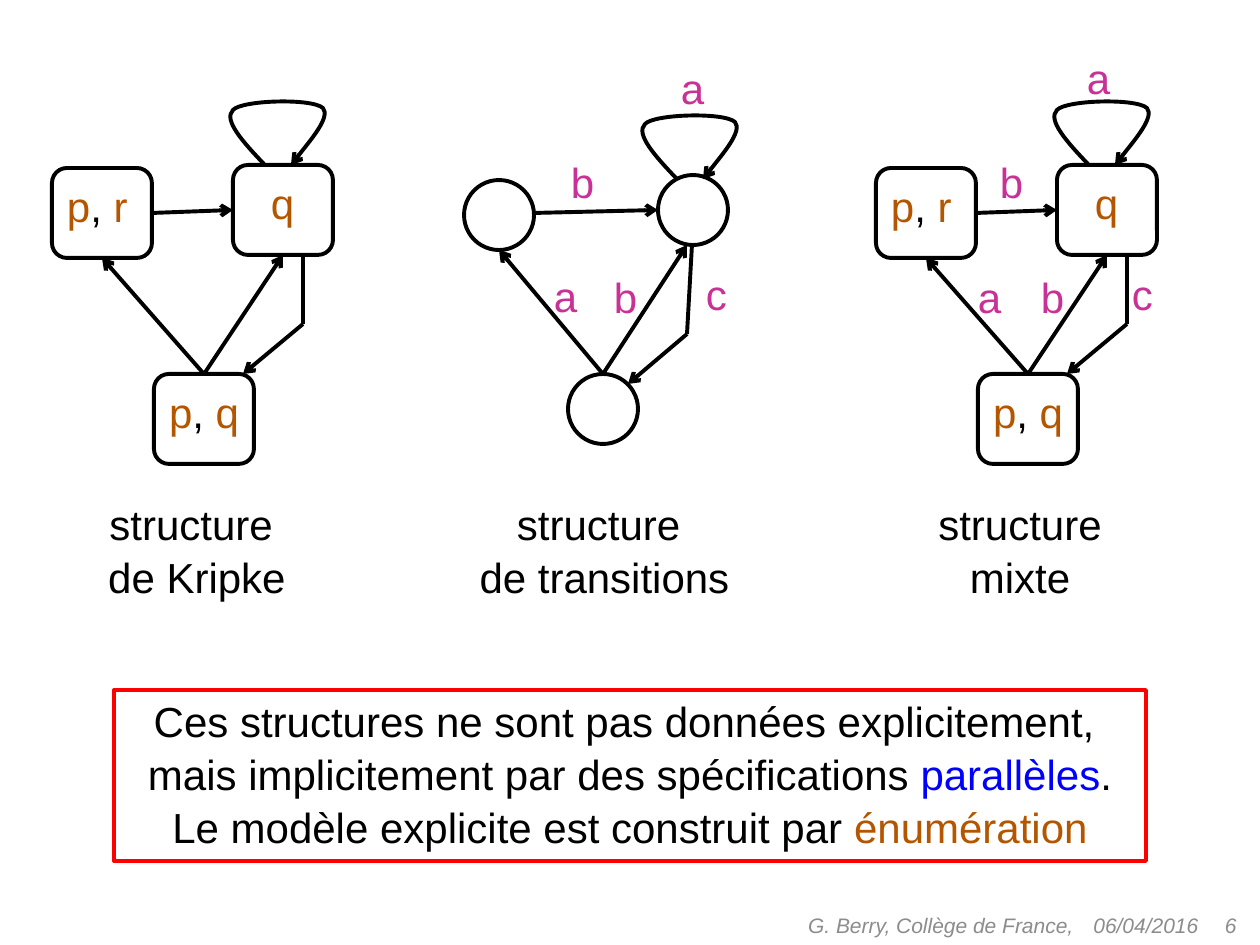
from dataclasses import dataclass

from lxml.etree import SubElement
from pptx import Presentation
from pptx.dml.color import RGBColor
from pptx.enum.shapes import MSO_CONNECTOR, MSO_SHAPE
from pptx.enum.text import MSO_ANCHOR, MSO_AUTO_SIZE, PP_ALIGN
from pptx.oxml.ns import qn
from pptx.util import Pt

SCALE = 914400 / 126  # EMU per px
TOP, BOTTOM, LEFT, RIGHT = 0, 2, 1, 3


@dataclass(frozen=True)
class Theme:
    font: str = "Arial"
    body: int = 24
    small: int = 12
    line: float = 2.25
    spacing: float = 1.05
    black: str = "000000"
    state: str = "B45600"
    action: str = "C83296"
    accent: str = "0000FF"
    frame: str = "FF0000"
    footer: str = "8C8C8C"


T = Theme()


def px(n):
    return round(n * SCALE)


def box_px(x, y, w, h):
    return px(x), px(y), px(w), px(h)


def outline(sp, color=T.black):
    """Unfilled shape with a plain outline and no shadow."""
    sp.fill.background()
    sp.line.color.rgb = RGBColor.from_string(color)
    sp.line.width = Pt(T.line)
    sp.shadow.inherit = False


def add_runs(p, runs, size=T.body, italic=False):
    for text, color in runs:
        r = p.add_run()
        r.text = text
        r.font.name, r.font.size, r.font.italic = T.font, Pt(size), italic
        r.font.color.rgb = RGBColor.from_string(color)


def write(sp, paragraphs, align, wrap):
    """Body text: a list of paragraphs, each a list of (text, colour)."""
    tf = sp.text_frame
    tf.word_wrap = wrap
    tf.auto_size = MSO_AUTO_SIZE.SHAPE_TO_FIT_TEXT
    tf.vertical_anchor = MSO_ANCHOR.TOP
    tf.margin_left = tf.margin_right = px(13)
    tf.margin_top, tf.margin_bottom = px(3), px(9)
    for i, runs in enumerate(paragraphs):
        p = tf.add_paragraph() if i else tf.paragraphs[0]
        p.alignment, p.line_spacing = align, T.spacing
        add_runs(p, runs)


def label(shapes, box, paragraphs, align=PP_ALIGN.LEFT):
    write(shapes.add_textbox(*box_px(*box)), paragraphs, align, False)


def arrowhead(sp):
    SubElement(sp.line._get_or_add_ln(), qn("a:tailEnd"), type="arrow")


def edge(shapes, start, end, arrow=True):
    cx = shapes.add_connector(MSO_CONNECTOR.STRAIGHT,
                              *map(px, (*start, *end)))
    cx.line.color.rgb = RGBColor.from_string(T.black)
    cx.line.width = Pt(T.line)
    if arrow:
        arrowhead(cx)
    SubElement(cx._element.spPr, qn("a:effectLst"))
    return cx


def self_loop(shapes, x, y):
    """Curved arrow from a state back to itself."""
    points = [(213, 65), (191, 42), (171, 20), (181, 10), (190, 0), (260, -2),
              (271, 8), (279, 17), (239, 65), (239, 65)]
    (x0, y0), *rest = [(px(x + dx), px(y + dy)) for dx, dy in points]
    fb = shapes.build_freeform(x0, y0)
    fb.add_line_segments(rest, close=False)
    sp = fb.convert_to_shape()
    outline(sp)
    arrowhead(sp)
    # Every three straight segments become one Bézier curve
    segments = list(sp._element.iter(qn("a:lnTo")))
    for i in range(0, len(segments), 3):
        curve = SubElement(segments[i].getparent(), qn("a:cubicBezTo"))
        for segment in segments[i:i + 3]:
            curve.append(segment[0])
            segment.getparent().remove(segment)


def caption(shapes, box, lines):
    label(shapes, box, [[(line, T.black)] for line in lines], PP_ALIGN.CENTER)


def action_labels(shapes, x, y, labels):
    for text, dx, dy in labels:
        label(shapes, (x + dx, y + dy, 49, 64), [[(text, T.action)]])


def boxed_graph(s, x, y):
    """States as rounded boxes with their propositions."""
    shapes = s.shapes.add_group_shape().shapes
    states = []
    for names, dx, dy, text_dx, text_w in (("pq", 102, 274, 2, 96),
                                           ("pr", 0, 68, 2, 87),
                                           ("q", 181, 65, 25, 49)):
        sp = shapes.add_shape(MSO_SHAPE.ROUNDED_RECTANGLE,
                              *box_px(x + dx, y + dy, 100, 90))
        outline(sp)
        states.append(sp)
        runs = [(names[0], T.state)]
        for name in names[1:]:
            runs += [(", ", T.black), (name, T.state)]
        label(shapes, (x + dx + text_dx, y + dy + 7, text_w, 64), [runs])
    pq, pr, q = states
    for a, side_a, b, side_b in ((pq, TOP, q, BOTTOM), (pq, TOP, pr, BOTTOM),
                                 (pr, RIGHT, q, LEFT)):
        cx = edge(shapes, (x, y), (x, y))
        cx.begin_connect(a, side_a)
        cx.end_connect(b, side_b)
    # Bent arrow from q back to p, q
    bend = (x + 251, y + 224)
    edge(shapes, (x + 251, y + 155), bend, arrow=False)
    edge(shapes, bend, (x + 191, y + 274))
    self_loop(shapes, x, y)
    return shapes


def circle_graph(s, x, y):
    """States as unnamed circles."""
    shapes = s.shapes.add_group_shape().shapes
    for dx, dy in ((104, 274), (0, 80), (194, 75)):
        outline(shapes.add_shape(MSO_SHAPE.OVAL,
                                 *box_px(x + dx, y + dy, 70, 70)))
    for x1, y1, x2, y2, arrow in ((139, 274, 35, 150, True),
                                  (139, 274, 223, 145, True),
                                  (228, 145, 223, 234, False),
                                  (223, 234, 164, 284, True),
                                  (70, 113, 194, 110, True)):
        edge(shapes, (x + x1, y + y1), (x + x2, y + y2), arrow)
    self_loop(shapes, x, y + 14)
    return shapes


def conclusion(s, box):
    sp = s.shapes.add_shape(MSO_SHAPE.RECTANGLE, *box_px(*box))
    outline(sp, T.frame)
    write(sp, [
        [("Ces structures ne sont pas données explicitement, ", T.black)],
        [("mais implicitement par des spécifications ", T.black),
         ("parallèles", T.accent), (".", T.black)],
        [("Le modèle explicite est construit par ", T.black),
         ("énumération", T.state)],
    ], PP_ALIGN.CENTER, True)


def footer(s, y, h):
    for text, x, w, align in (
            ("06/04/2016", 1081, 150, PP_ALIGN.LEFT),
            (" 6", 955, 294, PP_ALIGN.RIGHT),
            ("G. Berry, Collège de France, ", 693, 399, PP_ALIGN.RIGHT)):
        tf = s.shapes.add_textbox(*box_px(x, y, w, h)).text_frame
        tf.word_wrap = True
        tf.vertical_anchor = MSO_ANCHOR.MIDDLE
        p = tf.paragraphs[0]
        p.alignment = align
        add_runs(p, [(text, T.footer)], T.small, italic=True)


def main():
    prs = Presentation()
    prs.slide_width, prs.slide_height = px(1260), px(945)
    s = prs.slides.add_slide(prs.slide_layouts[6])

    # Three structures, equally spaced
    top = 100
    kripke, transitions, mixed = (52 + 412 * i for i in range(3))

    shapes = boxed_graph(s, kripke, top)
    caption(shapes, (kripke + 43, top + 393, 204, 117),
            ["structure ", "de Kripke"])

    shapes = circle_graph(s, transitions, top)
    caption(shapes, (transitions + 2, top + 393, 277, 117),
            ["structure ", "de transitions"])
    action_labels(shapes, transitions, top,
                  [("a", 77, 165), ("b", 94, 51), ("a", 204, -43),
                   ("b", 137, 166), ("c", 229, 163)])

    shapes = boxed_graph(s, mixed, top)
    caption(shapes, (mixed + 49, top + 393, 190, 117),
            ["structure ", "mixte"])
    action_labels(shapes, mixed, top,
                  [("a", 89, 166), ("b", 152, 166), ("c", 243, 163),
                   ("b", 111, 51), ("a", 198, -53)])

    conclusion(s, (114, 690, 1032, 171))
    footer(s, 905, 40)
    prs.save("out.pptx")


if __name__ == "__main__":
    main()
